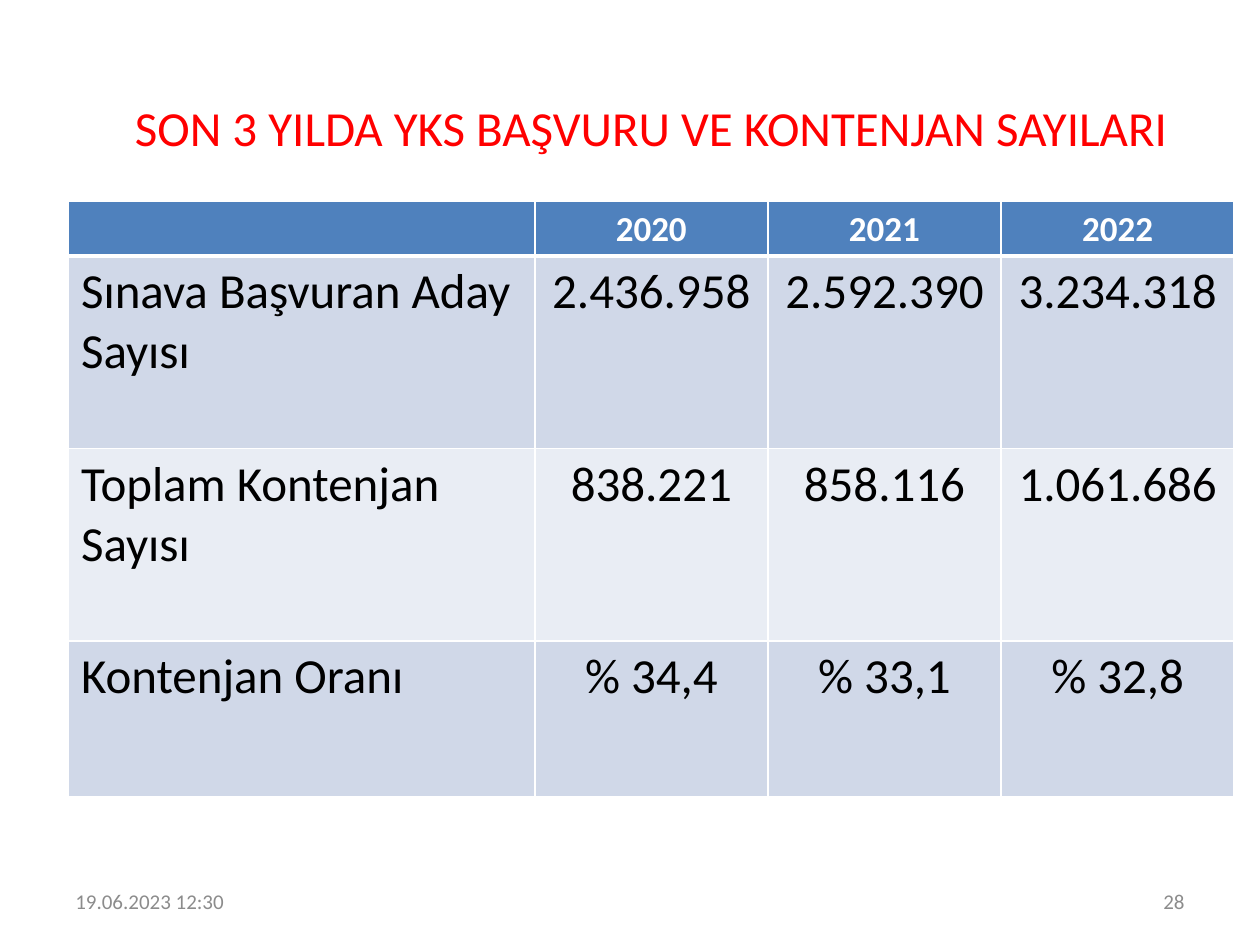
from lxml import etree
from pptx import Presentation
from pptx.dml.color import RGBColor
from pptx.enum.text import MSO_ANCHOR, PP_ALIGN
from pptx.oxml.ns import qn
from pptx.util import Cm, Pt

LEFT, MID, RIGHT = PP_ALIGN.LEFT, PP_ALIGN.CENTER, PP_ALIGN.RIGHT
CENTER = MSO_ANCHOR.MIDDLE
FONT = "Calibri"
HUES = {"title": "FF0000", "head": "4F81BD", "odd": "D0D8E8",
        "even": "E9EDF4", "line": "FFFFFF", "white": "FFFFFF",
        "text": "000000", "foot": "8C8C8C"}

# Content: text, left, top, width, height (cm), size, colour, alignment
BOXES = [
    ("SON 3 YILDA YKS BAŞVURU VE KONTENJAN SAYILARI",
     2.11, 1.57, 22.02, 1.98, 28, "title", MID),
    ("19.06.2023 12:30", 1.27, 17.65, 5.92, 1.02, 12, "foot", LEFT),
    ("28", 18.21, 17.65, 5.92, 1.02, 12, "foot", RIGHT),
]
ROWS = [
    ("", "2020", "2021", "2022"),
    ("Sınava Başvuran Aday Sayısı", "2.436.958", "2.592.390", "3.234.318"),
    ("Toplam Kontenjan Sayısı", "838.221", "858.116", "1.061.686"),
    ("Kontenjan Oranı", "% 34,4", "% 33,1", "% 32,8"),
]
WIDTHS = [9.4, 4.7, 4.7, 4.7]
HEIGHTS = [1.1, 3.88, 3.88, 3.14]


def write(frame, text, size, hue, align, bold=False):
    para = frame.paragraphs[0]
    para.alignment = align
    if not text:
        return
    run = para.add_run()
    run.text = text
    font = run.font
    font.name, font.size, font.bold = FONT, Pt(size), bold
    font.color.rgb = RGBColor.from_string(HUES[hue])


def edge(cell, side, width):
    props = cell._tc.get_or_add_tcPr()
    line = etree.Element(qn("a:" + side), w=str(Pt(width)))
    fill = etree.SubElement(line, qn("a:solidFill"))
    etree.SubElement(fill, qn("a:srgbClr"), val=HUES["line"])
    # Borders must stand before the cell fill
    props.insert(len(props.findall("*")) - 1, line)


deck = Presentation()
deck.slide_width, deck.slide_height = Cm(25.4), Cm(19.05)
slide = deck.slides.add_slide(deck.slide_layouts[6])

# Title and footer
for text, left, top, width, height, size, hue, align in BOXES:
    box = slide.shapes.add_textbox(Cm(left), Cm(top), Cm(width), Cm(height))
    frame = box.text_frame
    frame.word_wrap = True
    frame.vertical_anchor = CENTER
    write(frame, text, size, hue, align)

# Table
table = slide.shapes.add_table(
    len(ROWS), len(WIDTHS), Cm(1.38), Cm(4.06),
    Cm(sum(WIDTHS)), Cm(sum(HEIGHTS))).table
for col, width in zip(table.columns, WIDTHS):
    col.width = Cm(width)
for row, height in zip(table.rows, HEIGHTS):
    row.height = Cm(height)

for r, row in enumerate(ROWS):
    head = r == 0
    shade = "head" if head else "odd" if r % 2 else "even"
    for c, text in enumerate(row):
        cell = table.cell(r, c)
        cell.fill.solid()
        cell.fill.fore_color.rgb = RGBColor.from_string(HUES[shade])
        write(cell.text_frame, text, 20 if head else 28,
              "white" if head else "text", MID if c else LEFT, head)
        for side in ("lnL", "lnR", "lnT", "lnB"):
            thick = (head and side == "lnB") or (r == 1 and side == "lnT")
            edge(cell, side, 3 if thick else 1)

deck.save("out.pptx")
